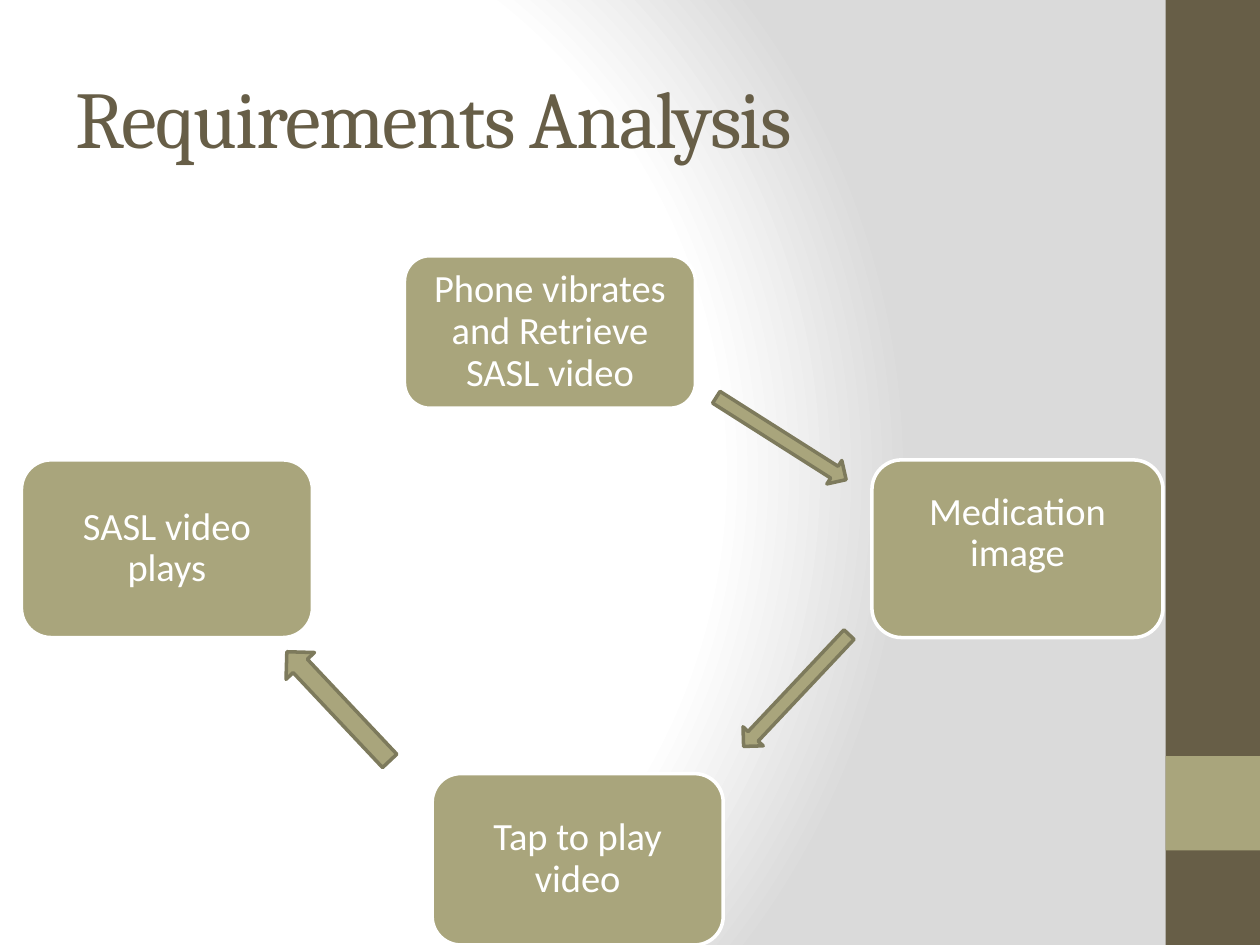
from lxml import etree
from pptx import Presentation
from pptx.dml.color import RGBColor
from pptx.enum.shapes import MSO_SHAPE
from pptx.enum.text import MSO_ANCHOR, PP_ALIGN
from pptx.oxml import parse_xml
from pptx.util import Inches, Pt

RECT = MSO_SHAPE.RECTANGLE
ROUND = MSO_SHAPE.ROUNDED_RECTANGLE
ARROW = MSO_SHAPE.RIGHT_ARROW
MIDDLE = MSO_ANCHOR.MIDDLE
LEFT, CENTER = PP_ALIGN.LEFT, PP_ALIGN.CENTER
HEX = {"white": "FFFFFF", "gray": "DADADA", "brown": "675E47",
       "olive": "A9A57C", "edge": "7D7A5C"}

# The slide is a grid of 40 columns by 30 rows with square cells
deck = Presentation()
deck.slide_width, deck.slide_height = Inches(10), Inches(7.5)
CELL = deck.slide_width / 40
slide = deck.slides.add_slide(deck.slide_layouts[6])


def draw(home, kind, grid, fill, line=None, turn=0):
    shape = home.add_shape(kind, *[round(n * CELL) for n in grid])
    shape.shadow.inherit = False
    shape.rotation = turn
    shape.fill.solid()
    shape.fill.fore_color.rgb = RGBColor.from_string(HEX[fill])
    if line:
        shape.line.color.rgb = RGBColor.from_string(HEX[line])
        shape.line.width = Pt(2)
    else:
        shape.line.fill.background()


def write(home, text, grid, font, size, color, align=LEFT, pad=0.1, lead=1, track=0):
    box = home.add_textbox(*[round(n * CELL) for n in grid])
    frame = box.text_frame
    frame.word_wrap = True
    frame.vertical_anchor = MIDDLE
    frame.margin_left = frame.margin_right = Inches(pad)
    frame.margin_top = frame.margin_bottom = Inches(min(pad, 0.09))
    para = frame.paragraphs[0]
    para.alignment = align
    para.line_spacing = lead
    run = para.add_run()
    run.text = text
    run.font.name = font
    run.font.size = Pt(size)
    run.font.color.rgb = RGBColor.from_string(HEX[color])
    if track:
        run._r.get_or_add_rPr().set("spc", str(track * 100))


# Radial background
back = slide.background.fill
back.gradient()
old = slide._element.find(".//{*}gradFill")
stops = "".join(
    f'<a:gs pos="{pos * 1000}"><a:srgbClr val="{HEX[name]}"/></a:gs>'
    for pos, name in [(0, "white"), (75, "white"), (100, "gray")])
glow = parse_xml(
    '<a:gradFill xmlns:a="http://schemas.openxmlformats.org/drawingml/2006/main" '
    f'rotWithShape="1"><a:gsLst>{stops}</a:gsLst><a:path path="circle">'
    '<a:fillToRect l="20000" t="50000" r="100000" b="50000"/></a:path></a:gradFill>')
old.getparent().replace(old, glow)

# Side band and title
draw(slide.shapes, RECT, (37, 0, 3, 30), "brown")
draw(slide.shapes, RECT, (37, 24, 3, 3), "olive")
write(slide.shapes, "Requirements Analysis", (2, 1.2, 33.32, 5),
      "Cambria", 46, "brown", track=-1)

# Steps: text, left, top, height, text offset from the top edge, text height
WIDE, INSET = 9.24, 0.28
steps = [
    ("Phone vibrates and Retrieve SASL video", 12.84, 8.12, 4.84, 0.24, 4.36),
    ("Medication image", 27.68, 14.6, 5.64, -0.68, 6.04),
    ("Tap to play video", 13.72, 24.56, 5.44, INSET, 4.88),
    ("SASL video plays", 0.68, 14.6, 5.64, INSET, 5.08),
]
for text, left, top, high, drop, tall in steps:
    group = slide.shapes.add_group_shape().shapes
    draw(group, ROUND, (left, top, WIDE, high), "olive", "white")
    write(group, text, (left + INSET, top + drop, WIDE - 2 * INSET, tall),
          "Calibri", 22, "white", align=CENTER, pad=0.09, lead=0.9)

# Arrows from step to step
for grid, turn in [((22.36, 13.48, 4.88, 0.88), 32.4),
                   ((22.84, 21.48, 4.88, 0.88), 133.3),
                   ((8.36, 21.8, 4.76, 1.24), 226.7)]:
    draw(slide.shapes, ARROW, grid, "olive", "edge", turn)

deck.save("out.pptx")
